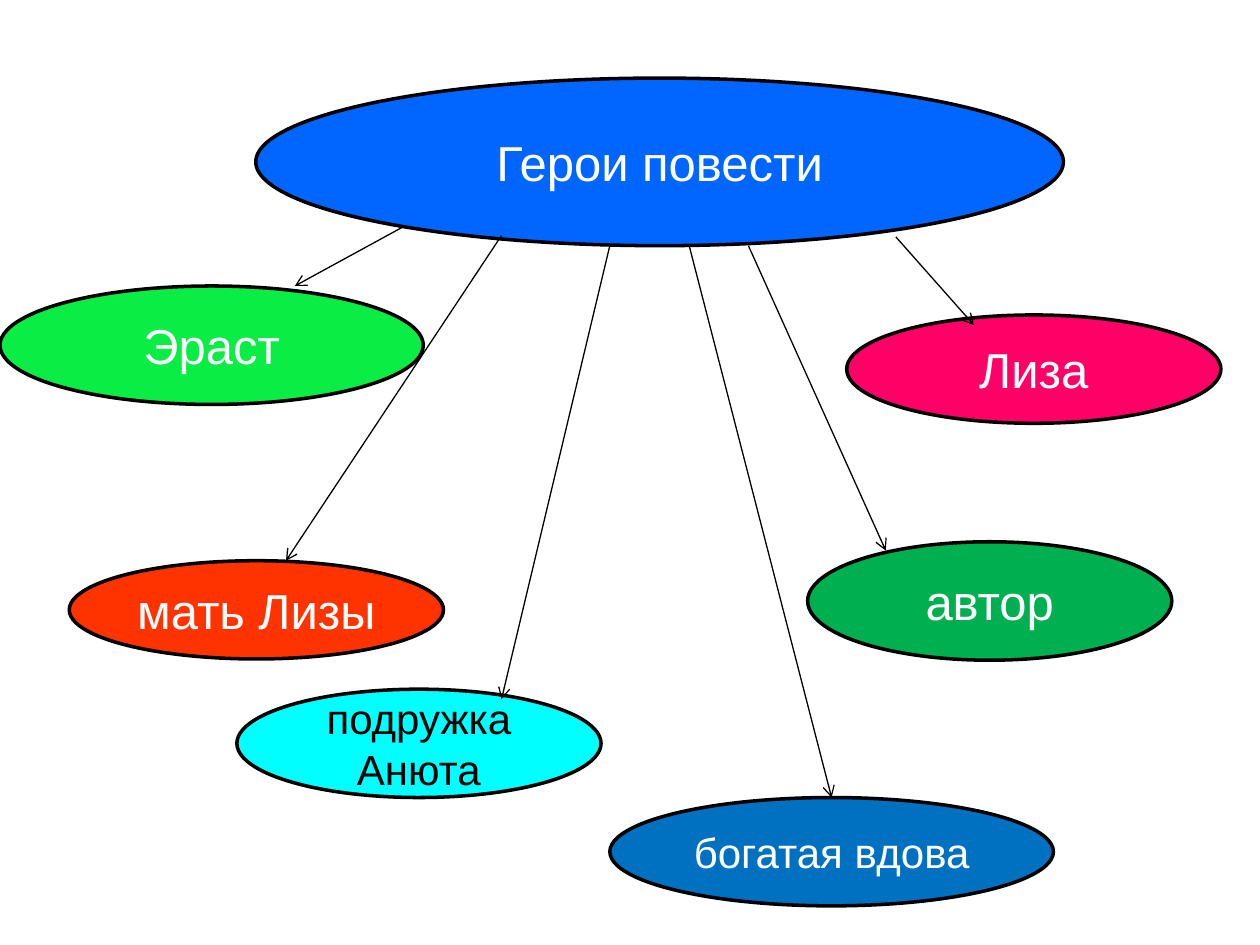
import pptx
import pptx.util
import pptx.dml.color
import pptx.enum.shapes
import pptx.enum.text
import pptx.oxml
import pptx.oxml.ns

Inches = pptx.util.Inches
Pt = pptx.util.Pt

COLORS = {
    "black": "000000", "white": "FFFFFF", "blue": "0066FF", "lime": "09ED45",
    "pink": "FF0066", "green": "00B050", "red": "FF3300", "navy": "0070C0",
    "cyan": "00FFFF",
}

# text, left, top, width, height, fill, text size, text colour
HEROES = [
    ("Герои повести", 2.03, 0.62, 6.41, 1.33, "blue", 28, "white"),
    ("Эраст", 0, 2.27, 3.36, 0.94, "lime", 28, "white"),
    ("Лиза", 6.72, 2.5, 2.97, 0.86, "pink", 28, "white"),
    ("автор", 6.41, 4.3, 2.89, 0.94, "green", 28, "white"),
    ("мать Лизы", 0.55, 4.45, 2.97, 0.78, "red", 28, "white"),
    ("богатая вдова", 4.84, 6.33, 3.52, 0.86, "navy", 24, "white"),
    ("подружка Анюта", 1.88, 5.47, 2.89, 0.86, "cyan", 24, "black"),
]

# start x, start y, end x, end y
ARROWS = [
    (3.2, 1.8, 2.34, 2.27),
    (7.11, 1.88, 7.73, 2.58),
    (5.94, 1.95, 7.03, 4.37),
    (3.98, 1.87, 2.27, 4.45),
    (4.84, 1.95, 3.98, 5.55),
]
WIDOW_ARROW = (5.47, 1.95, 6.6, 6.33)


def color(name):
    return pptx.dml.color.RGBColor.from_string(COLORS[name])


def add_oval(slide, text, left, top, width, height, fill, size, ink):
    oval = slide.shapes.add_shape(
        pptx.enum.shapes.MSO_SHAPE.OVAL,
        Inches(left), Inches(top), Inches(width), Inches(height))
    oval.shadow.inherit = False
    oval.fill.solid()
    oval.fill.fore_color.rgb = color(fill)
    oval.line.color.rgb = color("black")
    oval.line.width = Pt(2)
    frame = oval.text_frame
    frame.text = text
    frame.word_wrap = True
    frame.vertical_anchor = pptx.enum.text.MSO_ANCHOR.MIDDLE
    para = frame.paragraphs[0]
    para.alignment = pptx.enum.text.PP_ALIGN.CENTER
    font = para.runs[0].font
    font.name = "Arial"
    font.size = Pt(size)
    font.color.rgb = color(ink)
    return oval


def add_arrow(slide, *ends):
    arrow = slide.shapes.add_connector(
        pptx.enum.shapes.MSO_CONNECTOR.STRAIGHT, *map(Inches, ends))
    arrow.line.color.rgb = color("black")
    arrow.line.width = Pt(0.75)
    props = arrow.line._get_or_add_ln()
    head = pptx.oxml.parse_xml(
        "<a:tailEnd %s type='arrow'/>" % pptx.oxml.ns.nsdecls("a"))
    props.append(head)
    props.addnext(pptx.oxml.parse_xml(
        "<a:effectLst %s/>" % pptx.oxml.ns.nsdecls("a")))
    return arrow


def main():
    deck = pptx.Presentation()
    deck.slide_width = Inches(10)
    deck.slide_height = Inches(7.5)
    slide = deck.slides.add_slide(deck.slide_layouts[6])
    ovals = {hero[0]: add_oval(slide, *hero) for hero in HEROES}
    for ends in ARROWS:
        add_arrow(slide, *ends)
    add_arrow(slide, *WIDOW_ARROW).end_connect(ovals["богатая вдова"], 0)
    deck.save("out.pptx")


if __name__ == "__main__":
    main()
